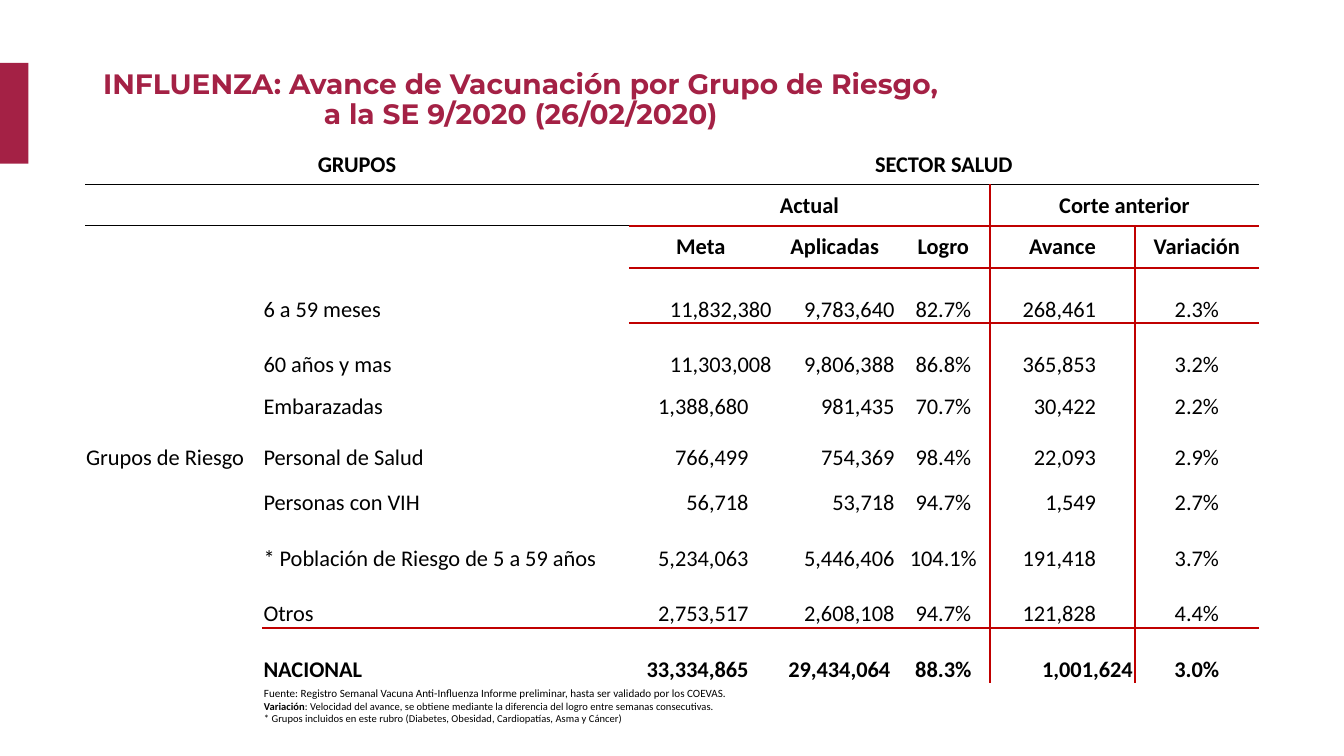
from lxml import etree
from pptx import Presentation
from pptx.dml.color import RGBColor
from pptx.enum.shapes import MSO_SHAPE
from pptx.enum.text import MSO_ANCHOR, PP_ALIGN
from pptx.oxml.ns import qn
from pptx.util import Pt

PX = 9525  # EMU per px, 96 px to the inch
WINE = RGBColor(0xA4, 0x21, 0x45)
RED = RGBColor(0xC0, 0x00, 0x00)
BLACK = RGBColor(0x00, 0x00, 0x00)

RECTANGLE = MSO_SHAPE.RECTANGLE
LEFT, CENTER, RIGHT = PP_ALIGN.LEFT, PP_ALIGN.CENTER, PP_ALIGN.RIGHT
MIDDLE, BOTTOM = MSO_ANCHOR.MIDDLE, MSO_ANCHOR.BOTTOM

NO_GRID_STYLE = "{2D5ABB26-0587-4C30-8999-92F81FD0307C}"
BORDER_TAGS = {"left": "a:lnL", "right": "a:lnR", "top": "a:lnT", "bottom": "a:lnB"}

COLUMN_WIDTHS = [169, 349, 137, 118, 89, 138, 118]
ROW_HEIGHTS = [39, 39, 40, 53, 53, 40, 48, 43, 53, 53, 53]
COLUMN_ALIGNS = [LEFT, LEFT, RIGHT, RIGHT, CENTER, RIGHT, CENTER]
RIGHT_MARGINS = [1, 1, 23, 2, 1, 37, 1]
SPECIAL_MARGINS = {(3, 2): 1, (4, 2): 1, (10, 3): 6, (10, 5): 2}
HEADER_ROWS = 3
TOTAL_ROW = 10
MERGES = [(0, 0, 1), (0, 2, 6), (1, 2, 4), (1, 5, 6)]  # row, first and last column

ROWS = [
    ["GRUPOS", "", "SECTOR SALUD", "", "", "", ""],
    ["", "", "Actual", "", "", "Corte anterior", ""],
    ["", "", "Meta", "Aplicadas", "Logro", "Avance", "Variación"],
    ["", "6 a 59 meses", "11,832,380", "9,783,640", "82.7%", "268,461", "2.3%"],
    ["", "60 años y mas", "11,303,008", "9,806,388", "86.8%", "365,853", "3.2%"],
    ["", "Embarazadas", "1,388,680", "981,435", "70.7%", "30,422", "2.2%"],
    ["Grupos de Riesgo", "Personal de Salud", "766,499", "754,369", "98.4%", "22,093", "2.9%"],
    ["", "Personas con VIH", "56,718", "53,718", "94.7%", "1,549", "2.7%"],
    ["", "* Población de Riesgo de 5 a 59 años", "5,234,063", "5,446,406", "104.1%",
     "191,418", "3.7%"],
    ["", "Otros", "2,753,517", "2,608,108", "94.7%", "121,828", "4.4%"],
    ["", "NACIONAL", "33,334,865", "29,434,064", "88.3%", "1,001,624", "3.0%"],
]

TITLE = "INFLUENZA: Avance de Vacunación por Grupo de Riesgo,\va la SE 9/2020 (26/02/2020)"
NOTES = [
    [("Fuente: Registro Semanal Vacuna Anti-Influenza Informe preliminar, "
      "hasta ser validado por los COEVAS.", 7.9, False)],
    [("Variación", 7.5, True),
     (": Velocidad del avance, se obtiene mediante la diferencia del logro "
      "entre semanas consecutivas.", 7.5, False)],
    [("* Grupos incluidos en este rubro (Diabetes, Obesidad, Cardiopatías, Asma y Cáncer)",
      7.5, False)],
]


def set_font(font, name, size, color, bold=False):
    for key, value in {"name": name, "size": Pt(size), "bold": bold}.items():
        setattr(font, key, value)
    font.color.rgb = color


def add_box(page, *frame):
    box = page.shapes.add_textbox(*(value * PX for value in frame))
    box.text_frame.word_wrap = True
    return box.text_frame


def add_side_bar(page):
    bar = page.shapes.add_shape(RECTANGLE, 0, 60 * PX, 27 * PX, 96 * PX)
    bar.shadow.inherit = False
    bar.fill.solid()
    bar.fill.fore_color.rgb = WINE
    bar.line.fill.background()


def add_title(page):
    text = add_box(page, 34, 63, 924, 65)
    text.vertical_anchor = MIDDLE
    para = text.paragraphs[0]
    para.text = TITLE
    para.alignment = CENTER
    para.line_spacing = 0.9
    for span in para.runs:
        set_font(span.font, "Montserrat", 20, WINE, True)


def add_notes(page):
    text = add_box(page, 242, 649, 920, 47)
    for index, spans in enumerate(NOTES):
        para = text.add_paragraph() if index else text.paragraphs[0]
        for words, size, bold in spans:
            span = para.add_run()
            span.text = words
            set_font(span.font, "Calibri", size, BLACK, bold)


def fill_cell(cell, row, column):
    header = row < HEADER_ROWS
    margin = 1 if header else SPECIAL_MARGINS.get((row, column), RIGHT_MARGINS[column])
    formats = {
        "margin_left": PX, "margin_right": margin * PX, "margin_top": PX,
        "margin_bottom": 0, "vertical_anchor": MIDDLE if header else BOTTOM,
    }
    for key, value in formats.items():
        setattr(cell, key, value)
    cell.fill.background()
    para = cell.text_frame.paragraphs[0]
    para.alignment = CENTER if header else COLUMN_ALIGNS[column]
    set_font(para.font, "Calibri", 16, BLACK)
    if ROWS[row][column]:
        span = para.add_run()
        span.text = ROWS[row][column]
        set_font(span.font, "Calibri", 16, BLACK, header or row == TOTAL_ROW)


def collect_borders():
    borders = {}

    def put(row, column, side, color, width):
        borders.setdefault((row, column), {})[side] = (color, width)

    # Horizontal rules: row above, first column, colour, width
    for row, first, color, width in [(0, 0, BLACK, 0.75), (1, 2, RED, 1.5),
                                     (2, 2, RED, 1.5), (9, 1, RED, 1.5)]:
        for column in range(first, len(COLUMN_WIDTHS)):
            put(row, column, "bottom", color, width)
            put(row + 1, column, "top", color, width)
    # Vertical rule between the current and the previous cut
    for row in range(1, len(ROWS)):
        put(row, 4, "right", RED, 1.5)
        put(row, 5, "left", RED, 1.5)
    put(1, 2, "right", RED, 1.5)
    return borders


def draw_borders(cell, sides):
    properties = cell._tc.get_or_add_tcPr()
    ordered = [side for side in BORDER_TAGS if side in sides]
    for index, side in enumerate(ordered):
        color, width = sides[side]
        line = etree.Element(qn(BORDER_TAGS[side]), w=str(Pt(width)))
        fill = etree.SubElement(line, qn("a:solidFill"))
        etree.SubElement(fill, qn("a:srgbClr"), val=str(color))
        properties.insert(index, line)


def add_coverage_table(page):
    frame = page.shapes.add_table(
        len(ROWS), len(COLUMN_WIDTHS), 81 * PX, 137 * PX,
        sum(COLUMN_WIDTHS) * PX, sum(ROW_HEIGHTS) * PX)
    table = frame.table
    table.first_row = table.horz_banding = False
    table._tbl.tblPr.find(qn("a:tableStyleId")).text = NO_GRID_STYLE
    for column, width in zip(table.columns, COLUMN_WIDTHS):
        column.width = width * PX
    for row, height in zip(table.rows, ROW_HEIGHTS):
        row.height = height * PX
    for row, first, last in MERGES:
        table.cell(row, first).merge(table.cell(row, last))
    borders = collect_borders()
    for row in range(len(ROWS)):
        for column in range(len(COLUMN_WIDTHS)):
            cell = table.cell(row, column)
            fill_cell(cell, row, column)
            draw_borders(cell, borders.get((row, column), {}))


def main():
    deck = Presentation()
    deck.slide_width, deck.slide_height = 1280 * PX, 720 * PX
    page = deck.slides.add_slide(deck.slide_layouts[6])
    add_side_bar(page)
    add_title(page)
    add_coverage_table(page)
    add_notes(page)
    deck.save("out.pptx")


if __name__ == "__main__":
    main()
